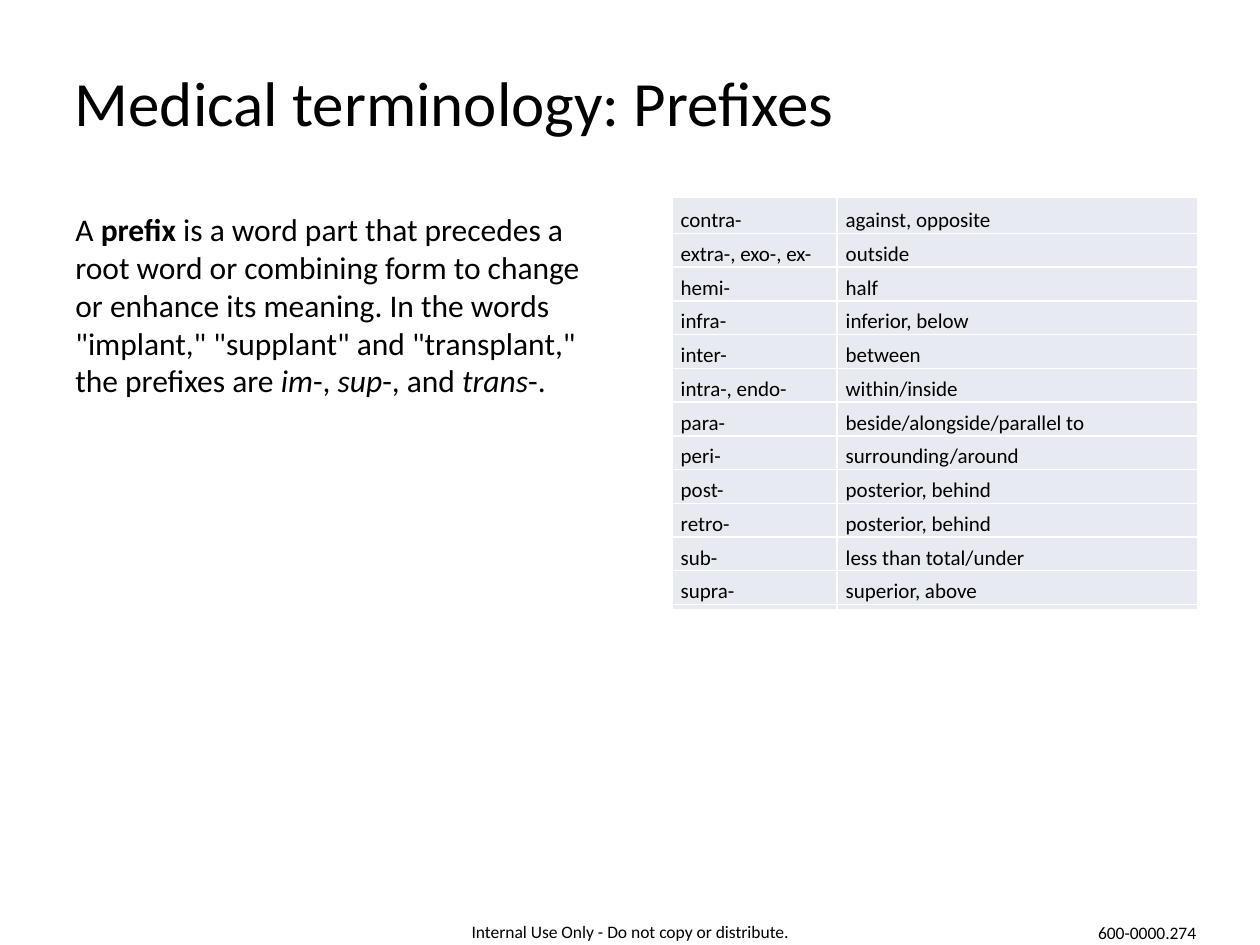
from lxml import etree
from pptx import Presentation
from pptx.dml.color import RGBColor
from pptx.enum.text import MSO_ANCHOR, PP_ALIGN
from pptx.oxml.ns import qn
from pptx.util import Pt

BOTTOM = MSO_ANCHOR.BOTTOM
LEFT, CENTER = PP_ALIGN.LEFT, PP_ALIGN.CENTER
FONT = "Calibri"
COLORS = {"text": "000000", "cell": "E7EAF0", "border": "FFFFFF"}

TITLE = [("Medical terminology: Prefixes", "")]
DEFINITION = [
    ("A ", ""),
    ("prefix", "bold"),
    (" is a word part that precedes a root word or combining form to change "
     "or enhance its meaning. In the words \"implant,\" \"supplant\" and "
     "\"transplant,\" the prefixes are ", ""),
    ("im", "italic"),
    ("-, ", ""),
    ("sup", "italic"),
    ("-, and ", ""),
    ("trans", "italic"),
    ("-.", ""),
]
NOTICE = [("Internal Use Only - Do not copy or distribute.", "")]
DOCUMENT_NUMBER = [("600-0000.274", "")]
PREFIXES = [
    ("contra-", "against, opposite"),
    ("extra-, exo-, ex-", "outside"),
    ("hemi-", "half"),
    ("infra-", "inferior, below"),
    ("inter-", "between"),
    ("intra-, endo-", "within/inside"),
    ("para-", "beside/alongside/parallel to"),
    ("peri-", "surrounding/around"),
    ("post-", "posterior, behind"),
    ("retro-", "posterior, behind"),
    ("sub-", "less than total/under"),
    ("supra-", "superior, above"),
]
COLUMN_WIDTHS = [94.3, 205.9]
ROW_HEIGHTS = [20.4] + [19.3] * (len(PREFIXES) - 1) + [2.9]


def add_runs(paragraph, runs, size):
    for text, style in runs:
        run = paragraph.add_run()
        run.text = text
        run.font.name = FONT
        run.font.size = Pt(size)
        run.font.color.rgb = RGBColor.from_string(COLORS["text"])
        if style == "bold":
            run.font.bold = True
        elif style == "italic":
            run.font.italic = True


def add_text(slide, box, runs, size, align=LEFT, wrap=True, insets=True):
    shape = slide.shapes.add_textbox(*map(Pt, box))
    frame = shape.text_frame
    frame.word_wrap = wrap
    if not insets:
        frame.margin_left = frame.margin_right = 0
        frame.margin_top = frame.margin_bottom = 0
    paragraph = frame.paragraphs[0]
    paragraph.alignment = align
    add_runs(paragraph, runs, size)


def format_cell(cell):
    cell.margin_left = Pt(5)
    cell.margin_right = cell.margin_top = cell.margin_bottom = 0
    cell.vertical_anchor = BOTTOM
    properties = cell._tc.get_or_add_tcPr()
    for side in ("a:lnL", "a:lnR", "a:lnT", "a:lnB"):
        line = etree.SubElement(properties, qn(side), w=str(Pt(1)))
        fill = etree.SubElement(line, qn("a:solidFill"))
        etree.SubElement(fill, qn("a:srgbClr"), val=COLORS["border"])
    cell.fill.solid()
    cell.fill.fore_color.rgb = RGBColor.from_string(COLORS["cell"])


def add_prefix_table(slide, left, top):
    """Add the prefix rows, closed by a thin empty row."""
    rows = PREFIXES + [("", "")]
    table = slide.shapes.add_table(
        len(rows), len(COLUMN_WIDTHS), Pt(left), Pt(top),
        Pt(sum(COLUMN_WIDTHS)), Pt(sum(ROW_HEIGHTS))).table
    table.first_row = table.horz_banding = False
    for column, width in zip(table.columns, COLUMN_WIDTHS):
        column.width = Pt(width)
    for row, height, texts in zip(table.rows, ROW_HEIGHTS, rows):
        row.height = Pt(height)
        for cell, text in zip(row.cells, texts):
            format_cell(cell)
            paragraph = cell.text_frame.paragraphs[0]
            if text:
                paragraph.line_spacing = 1.15
                add_runs(paragraph, [(text, "")], 12)
            else:
                etree.SubElement(paragraph._p, qn("a:endParaRPr"), sz="100")


def main():
    presentation = Presentation()
    presentation.slide_width, presentation.slide_height = Pt(720), Pt(540)
    slide = presentation.slides.add_slide(presentation.slide_layouts[6])
    add_text(slide, (258, 522.7, 204, 19.4), NOTICE, 10, align=CENTER)
    add_text(slide, (620.4, 523.2, 72, 19.4), DOCUMENT_NUMBER, 10, wrap=False)
    add_text(slide, (42.8, 36, 634, 79), TITLE, 36, insets=False)
    add_prefix_table(slide, 384, 113)
    add_text(slide, (36, 116.6, 311, 116.6), DEFINITION, 18)
    presentation.save("out.pptx")


if __name__ == "__main__":
    main()
